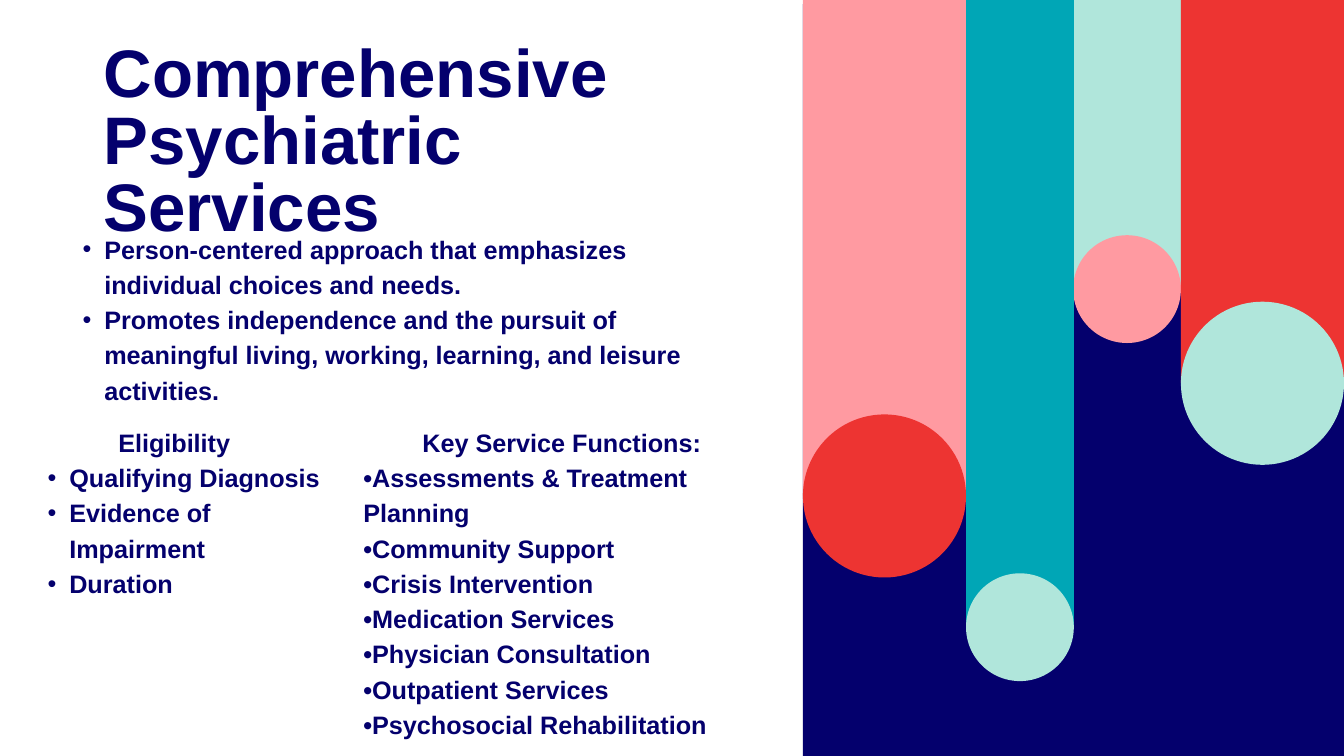
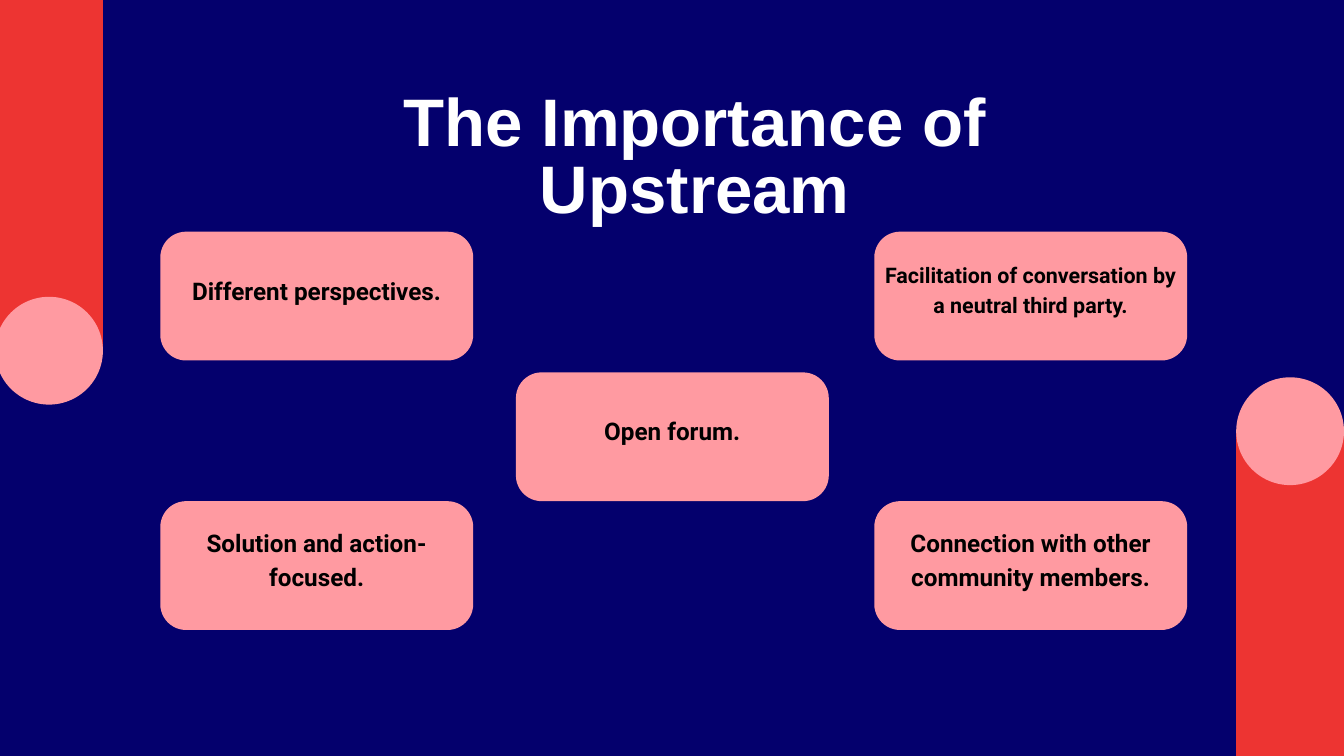
from lxml.etree import SubElement
from pptx import Presentation
from pptx.dml.color import RGBColor
from pptx.enum.shapes import MSO_SHAPE
from pptx.enum.text import MSO_ANCHOR, MSO_AUTO_SIZE, PP_ALIGN
from pptx.oxml.ns import qn
from pptx.util import Pt

PX = 9525  # EMU in one px, 96 px to the inch
WIDE, HIGH = 1920, 1080

NAVY, RED, PINK = "04006D", "ED3432", "FF9AA1"
TEAL, MINT = "00A6B6", "B0E6DB"
WHITE, BLACK = "FFFFFF", "000000"


def paint(fill, color):
    fill.solid()
    fill.fore_color.rgb = RGBColor.from_string(color)


def place(shape, box):
    shape.left, shape.top, shape.width, shape.height = (n * PX for n in box)


def fit(frame, anchor=MSO_ANCHOR.TOP, top=0, foot=0):
    """Fix the wrap, anchor and insets of a text frame."""
    frame.word_wrap = True
    frame.auto_size = MSO_AUTO_SIZE.NONE
    frame.vertical_anchor = anchor
    frame.margin_left = frame.margin_right = 0
    frame.margin_top, frame.margin_bottom = top * PX, foot * PX


def write(frame, text, size=27, color=NAVY, font="Arial", align=PP_ALIGN.LEFT,
          lead=1.4, bullet=False):
    """Add one bold paragraph; lead is line pitch over text size."""
    para = frame.add_paragraph() if frame.text else frame.paragraphs[0]
    para.alignment = align
    para.line_spacing = Pt(round(size * lead, 1))
    para.space_before = para.space_after = Pt(0)
    para.level = 1 if bullet else 0
    props = para._p.get_or_add_pPr()
    props.set("marL", str(61 * PX if bullet else 0))
    props.set("indent", str(-31 * PX if bullet else 0))
    if bullet:
        SubElement(props, qn("a:buFont")).set("typeface", "Arial")
        SubElement(props, qn("a:buChar")).set("char", "•")
    else:
        SubElement(props, qn("a:buNone"))
    run = para.add_run()
    run.text = text
    run.font.size, run.font.name, run.font.bold = Pt(size), font, True
    run.font.color.rgb = RGBColor.from_string(color)


class Deck:
    def __init__(self):
        self.show = Presentation()
        self.show.slide_width, self.show.slide_height = WIDE * PX, HIGH * PX
        self.slide = None

    def start(self, layout, back):
        self.slide = self.show.slides.add_slide(self.show.slide_layouts.get_by_name(layout))
        paint(self.slide.background.fill, back)

    def title(self, text, box, **style):
        shape = self.slide.shapes.title
        place(shape, box)
        fit(shape.text_frame)
        write(shape.text_frame, text, size=72, lead=1, **style)

    def body(self, slot, box, items=(), head=None, bullet=True):
        """Fill a body placeholder with an optional centred head and a list."""
        shape = self.slide.placeholders[slot]
        place(shape, box)
        frame = shape.text_frame
        fit(frame)
        if head:
            write(frame, head, align=PP_ALIGN.CENTER)
        for item in items:
            write(frame, item, bullet=bullet)

    def shape(self, kind, box, color):
        shape = self.slide.shapes.add_shape(kind, *(n * PX for n in box))
        shape.shadow.inherit = False
        paint(shape.fill, color)
        shape.line.fill.background()
        return shape

    def drop(self, left, wide, tip, bar, dot, rise=False):
        """Draw a bar from the top (or foot, if rise) that ends in a dot at tip."""
        top, high = (tip, HIGH - tip) if rise else (0, tip)
        self.shape(MSO_SHAPE.RECTANGLE, (left, top, wide, high), bar)
        self.shape(MSO_SHAPE.OVAL, (left, tip - wide // 2, wide, wide), dot)

    def card(self, left, top, text, size=26):
        card = self.shape(MSO_SHAPE.ROUNDED_RECTANGLE, (left, top, 447, 184), PINK)
        card.adjustments[0] = 0.2
        fit(card.text_frame, MSO_ANCHOR.MIDDLE, top=6, foot=29)
        write(card.text_frame, text, size=size, color=BLACK, font="Roboto",
              align=PP_ALIGN.CENTER)

    def clean(self):
        """Remove placeholders left empty."""
        for shape in list(self.slide.placeholders):
            if not shape.text_frame.text:
                shape.element.getparent().remove(shape.element)


def services(deck):
    deck.start("Comparison", WHITE)
    deck.shape(MSO_SHAPE.RECTANGLE, (1147, 6, 773, HIGH - 6), NAVY)
    for drop in ((1533, 154, 413, MINT, PINK), (1380, 154, 896, TEAL, MINT),
                 (1687, 233, 547, RED, MINT), (1147, 233, 708, PINK, RED)):
        deck.drop(*drop)
    deck.title("Comprehensive Psychiatric Services", (148, 62, 889, 198))
    deck.body(1, (88, 327, 968, 198), (
        "Person-centered approach that emphasizes individual choices and needs.",
        "Promotes independence and the pursuit of meaningful living, working, "
        "learning, and leisure activities."))
    deck.body(2, (38, 603, 422, 248), (
        "Qualifying Diagnosis", "Evidence of Impairment", "Duration"),
        head="Eligibility")
    deck.body(3, (519, 603, 567, 397), (
        "•Assessments & Treatment Planning", "•Community Support",
        "•Crisis Intervention", "•Medication Services",
        "•Physician Consultation", "•Outpatient Services",
        "•Psychosocial Rehabilitation"),
        head="Key Service Functions:", bullet=False)
    deck.clean()


def upstream(deck):
    deck.start("Title Only", NAVY)
    deck.drop(1766, 154, 616, RED, PINK, rise=True)
    deck.drop(-7, 154, 501, RED, PINK)
    deck.title("The Importance of Upstream", (357, 132, 1271, 102),
               color=WHITE, align=PP_ALIGN.CENTER)
    left, mid, right = 229, 737, 1249
    high, low = 331, 716
    deck.card(left, high, "Different perspectives.")
    deck.card(mid, 532, "Open forum.")
    deck.card(left, low, "Solution and action-focused.")
    deck.card(right, low, "Connection with other community members.")
    deck.card(right, high, "Facilitation of conversation by a neutral third party.", size=23)
    deck.clean()


def main():
    deck = Deck()
    services(deck)
    upstream(deck)
    deck.show.save("out.pptx")


if __name__ == "__main__":
    main()
